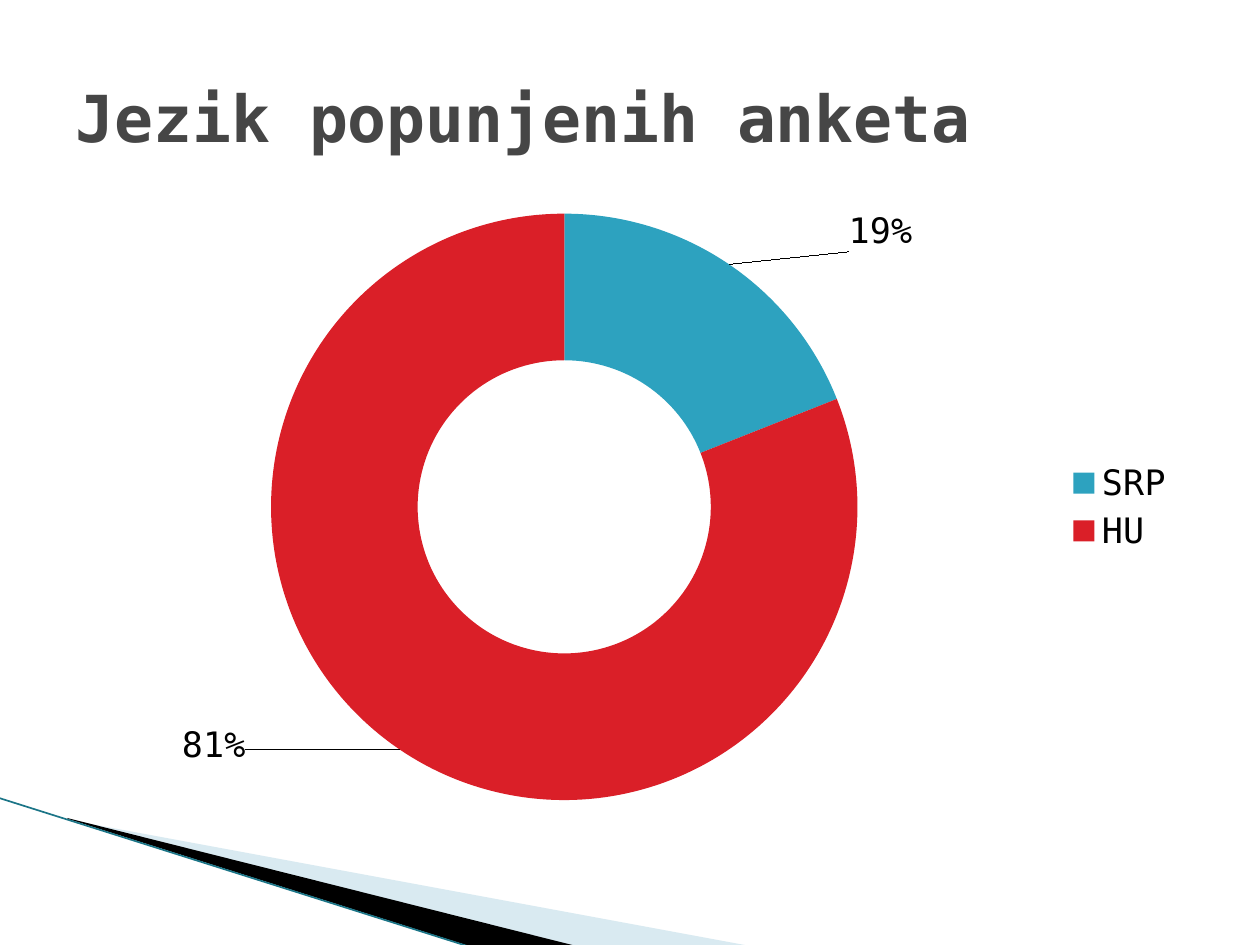
from pptx import Presentation
from pptx.chart.data import CategoryChartData
from pptx.dml.color import RGBColor
from pptx.enum.chart import XL_CHART_TYPE, XL_LEGEND_POSITION
from pptx.enum.shapes import MSO_CONNECTOR
from pptx.enum.text import MSO_ANCHOR, PP_ALIGN
from pptx.oxml import parse_xml
from pptx.oxml.ns import nsdecls, qn
from pptx.oxml.xmlchemy import OxmlElement
from pptx.util import Pt

DOUGHNUT = XL_CHART_TYPE.DOUGHNUT
RIGHT = XL_LEGEND_POSITION.RIGHT
STRAIGHT = MSO_CONNECTOR.STRAIGHT
MIDDLE = MSO_ANCHOR.MIDDLE
LEFT = PP_ALIGN.LEFT

PX = 914400 // 126
W, H = 1260, 945
FONT = "DejaVu Sans Mono"


def rgb(value):
    return RGBColor.from_string(value)


def place(box):
    return [v * PX for v in box]


def style(font, size, color, bold=False):
    font.name, font.size, font.bold = FONT, Pt(size), bold
    font.color.rgb = rgb(color)


def add_wedge(s, origin, points, color, alpha=None):
    x, y = origin
    (x0, y0), *rest = [(x + dx, y + dy) for dx, dy in points]
    fb = s.shapes.build_freeform(x0, y0, scale=PX)
    fb.add_line_segments(rest, close=True)
    sp = fb.convert_to_shape()
    sp.shadow.inherit = False
    sp.fill.solid()
    sp.fill.fore_color.rgb = rgb(color)
    sp.line.fill.background()
    if alpha is not None:
        a = OxmlElement("a:alpha")
        a.set("val", str(alpha * 1000))
        sp.fill._xPr.find(".//" + qn("a:srgbClr")).append(a)


def add_corner(s, box):
    """Sweeping wedges and edge line in the bottom left corner."""
    x, y, w, h = box
    add_wedge(s, (x, y), [(70, 22), (w, h), (576, h), (70, 21)], "A0CBDC", 40)
    add_wedge(s, (x, y), [(68, 20), (577, h), (470, h), (69, 21)], "000000")
    cn = s.shapes.add_connector(STRAIGHT, *place((x, y, x + 468, y + h)))
    cn.line.color.rgb = rgb("1B7587")
    cn.line.width = Pt(0.95)
    cn._element.spPr.append(OxmlElement("a:effectLst"))


def add_title(s, box, text):
    sp = s.shapes.title
    sp.left, sp.top, sp.width, sp.height = place(box)
    tf = sp.text_frame
    tf.word_wrap = True
    tf.vertical_anchor = MIDDLE
    p = tf.paragraphs[0]
    p.alignment = LEFT
    r = p.add_run()
    r.text = text
    style(r.font, 37, "464646", True)


def layout_xml(inner=False, **values):
    target = '<c:layoutTarget val="inner"/>' if inner else ""
    modes = '<c:xMode val="edge"/><c:yMode val="edge"/>' if inner else ""
    parts = "".join(f'<c:{k} val="{v}"/>' for k, v in values.items())
    return parse_xml(f'<c:layout {nsdecls("c")}><c:manualLayout>{target}'
                     f'{modes}{parts}</c:manualLayout></c:layout>')


def add_doughnut(s, box, slices):
    """slices: name, value, colour and label offset as chart fractions."""
    data = CategoryChartData(number_format="0%")
    data.categories = [name for name, *_ in slices]
    data.add_series("Series 1", [value for _, value, *_ in slices])
    chart = s.shapes.add_chart(DOUGHNUT, *place(box), data).chart
    style(chart.font, 10, "000000")
    chart.has_title = False
    chart.has_legend = True
    chart.legend.position = RIGHT
    chart.legend.include_in_layout = False
    style(chart.legend.font, 20, "000000")

    plot = chart.plots[0]
    plot.vary_by_categories = True
    ser = plot.series[0]
    labels = ser.data_labels
    labels.show_value = True
    labels.show_percentage = False
    labels.number_format = "0%"
    labels.number_format_is_linked = False
    style(labels.font, 20, "000000")

    for i, (_, _, color, (dx, dy)) in enumerate(slices):
        pt = ser.points[i]
        pt.format.fill.solid()
        pt.format.fill.fore_color.rgb = rgb(color)
        pt.format.line.fill.background()
        style(pt.data_label.font, 20, "000000")
        # Labels are pulled outside the ring
        idx = labels._element.findall(qn("c:dLbl"))[i].find(qn("c:idx"))
        fmt = parse_xml(f'<c:numFmt {nsdecls("c")} formatCode="0%" '
                        'sourceLinked="0"/>')
        idx.addnext(fmt)
        idx.addnext(layout_xml(x=dx, y=dy))

    # Fixed ring position
    area = chart._chartSpace.find(".//" + qn("c:plotArea"))
    for old in area.findall(qn("c:layout")):
        area.remove(old)
    area.insert(0, layout_xml(True, x=0.19, y=0.03, w=0.52, h=0.94))


def main():
    prs = Presentation()
    prs.slide_width, prs.slide_height = W * PX, H * PX
    s = prs.slides.add_slide(prs.slide_layouts[5])
    add_corner(s, (-1, 798, 751, 148))
    add_title(s, (63, 38, 1134, 157), "Jezik popunjenih anketa")
    add_doughnut(s, (54, 195, 1134, 624), [
        ("SRP", 0.19, "2DA2BF", (0.17, -0.15)),
        ("HU", 0.81, "DA1F28", (-0.2, 0.09)),
    ])
    prs.save("out.pptx")


if __name__ == "__main__":
    main()
